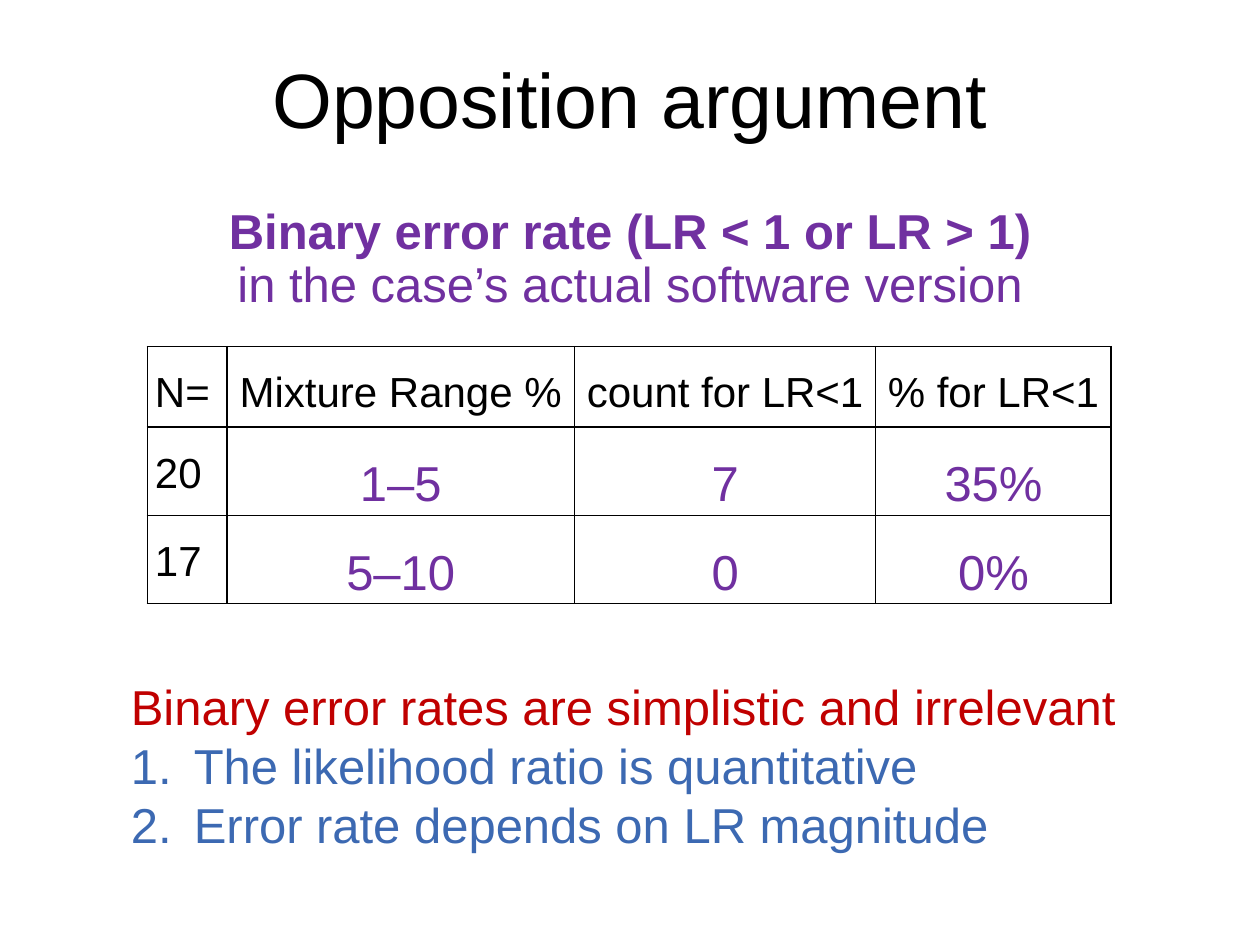
from lxml import etree
from pptx import Presentation
from pptx.dml.color import RGBColor
from pptx.enum.text import MSO_ANCHOR, MSO_AUTO_SIZE, PP_ALIGN
from pptx.oxml.ns import qn
from pptx.util import Inches, Pt

CENTER, LEFT = PP_ALIGN.CENTER, PP_ALIGN.LEFT
MIDDLE, TOP = MSO_ANCHOR.MIDDLE, MSO_ANCHOR.TOP
FONT = "Arial"
BLACK, PURPLE, RED, BLUE = "000000", "7030A0", "C00000", "3C69B2"

# Content
TITLE = "Opposition argument"
SUBTITLE = ["Binary error rate (LR < 1 or LR > 1)",
            "in the case’s actual software version"]
ROWS = [
    ["N=", "Mixture Range %", "count for LR<1", "% for LR<1"],
    ["20", "1–5", "7", "35%"],
    ["17", "5–10", "0", "0%"],
]
COLUMN_WIDTHS = [0.63, 2.76, 2.39, 1.87]
ROW_HEIGHTS = [0.64, 0.53, 0.53]
CONCLUSION = "Binary error rates are simplistic and irrelevant"
REASONS = ["The likelihood ratio is quantitative",
           "Error rate depends on LR magnitude"]


def style(paragraph, size, color, alignment=LEFT, bold=False, spacing=None):
    paragraph.alignment = alignment
    paragraph.line_spacing = spacing
    for run in paragraph.runs:
        run.font.name = FONT
        run.font.size = Pt(size)
        run.font.bold = bold
        run.font.color.rgb = RGBColor.from_string(color)


def add_text(slide, box, lines, anchor=TOP):
    shape = slide.shapes.add_textbox(*map(Inches, box))
    frame = shape.text_frame
    frame.word_wrap = True
    frame.vertical_anchor = anchor
    frame.text = "\n".join(lines)
    return frame


def number(paragraph):
    properties = paragraph._p.get_or_add_pPr()
    properties.set("marL", str(Inches(0.5)))
    properties.set("indent", str(-Inches(0.5)))
    etree.SubElement(properties, qn("a:buFont"), typeface="+mj-lt")
    etree.SubElement(properties, qn("a:buAutoNum"), type="arabicPeriod")


def add_borders(cell):
    properties = cell._tc.get_or_add_tcPr()
    for index, side in enumerate(("lnL", "lnR", "lnT", "lnB")):
        line = etree.Element(qn(f"a:{side}"), w=str(Pt(1)))
        fill = etree.SubElement(line, qn("a:solidFill"))
        etree.SubElement(fill, qn("a:srgbClr"), val=BLACK)
        properties.insert(index, line)


presentation = Presentation()
presentation.slide_width, presentation.slide_height = Inches(10), Inches(7.5)
slide = presentation.slides.add_slide(presentation.slide_layouts[6])

# Subtitle
frame = add_text(slide, (1.12, 1.59, 7.76, 0.95), SUBTITLE, MIDDLE)
frame.margin_left = frame.margin_right = Inches(0.07)
frame.margin_top = frame.margin_bottom = Inches(0.04)
for index, paragraph in enumerate(frame.paragraphs):
    style(paragraph, 28, PURPLE, CENTER, bold=index == 0, spacing=0.9)

# Error rate table
table = slide.shapes.add_table(
    len(ROWS), len(COLUMN_WIDTHS), Inches(1.17), Inches(2.75),
    Inches(sum(COLUMN_WIDTHS)), Inches(sum(ROW_HEIGHTS))).table
table.first_row = table.horz_banding = False
for column, width in zip(table.columns, COLUMN_WIDTHS):
    column.width = Inches(width)
for row, height in zip(table.rows, ROW_HEIGHTS):
    row.height = Inches(height)
for r, values in enumerate(ROWS):
    for c, value in enumerate(values):
        cell = table.cell(r, c)
        is_result = r > 0 and c > 0
        cell.text = value
        cell.margin_left = cell.margin_right = Inches(0.06)
        cell.margin_top = cell.margin_bottom = 0
        cell.vertical_anchor = MIDDLE if is_result else TOP
        cell.fill.background()
        add_borders(cell)
        style(cell.text_frame.paragraphs[0], 28 if is_result else 24,
              PURPLE if is_result else BLACK, CENTER if c else LEFT, spacing=1.5)

# Conclusion and numbered reasons
frame = add_text(slide, (0.94, 5.32, 8.12, 1.51), [CONCLUSION, *REASONS])
frame.word_wrap = False
frame.auto_size = MSO_AUTO_SIZE.SHAPE_TO_FIT_TEXT
heading, *reasons = frame.paragraphs
style(heading, 28, RED)
for paragraph in reasons:
    style(paragraph, 28, BLUE)
    number(paragraph)

# Title
frame = add_text(slide, (0, 0.15, 10, 1.25), [TITLE], MIDDLE)
style(frame.paragraphs[0], 44, BLACK, CENTER)

presentation.save("out.pptx")
